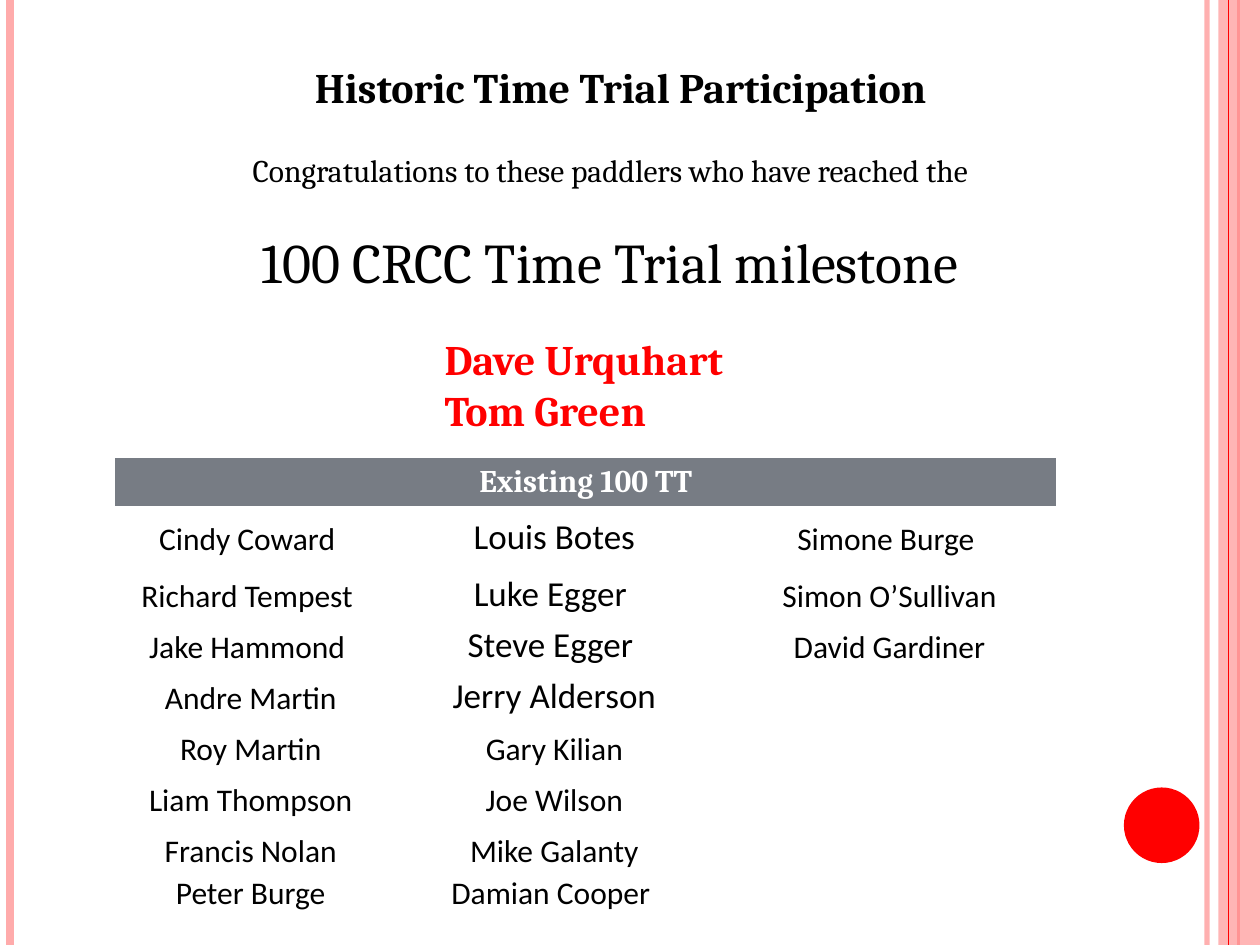
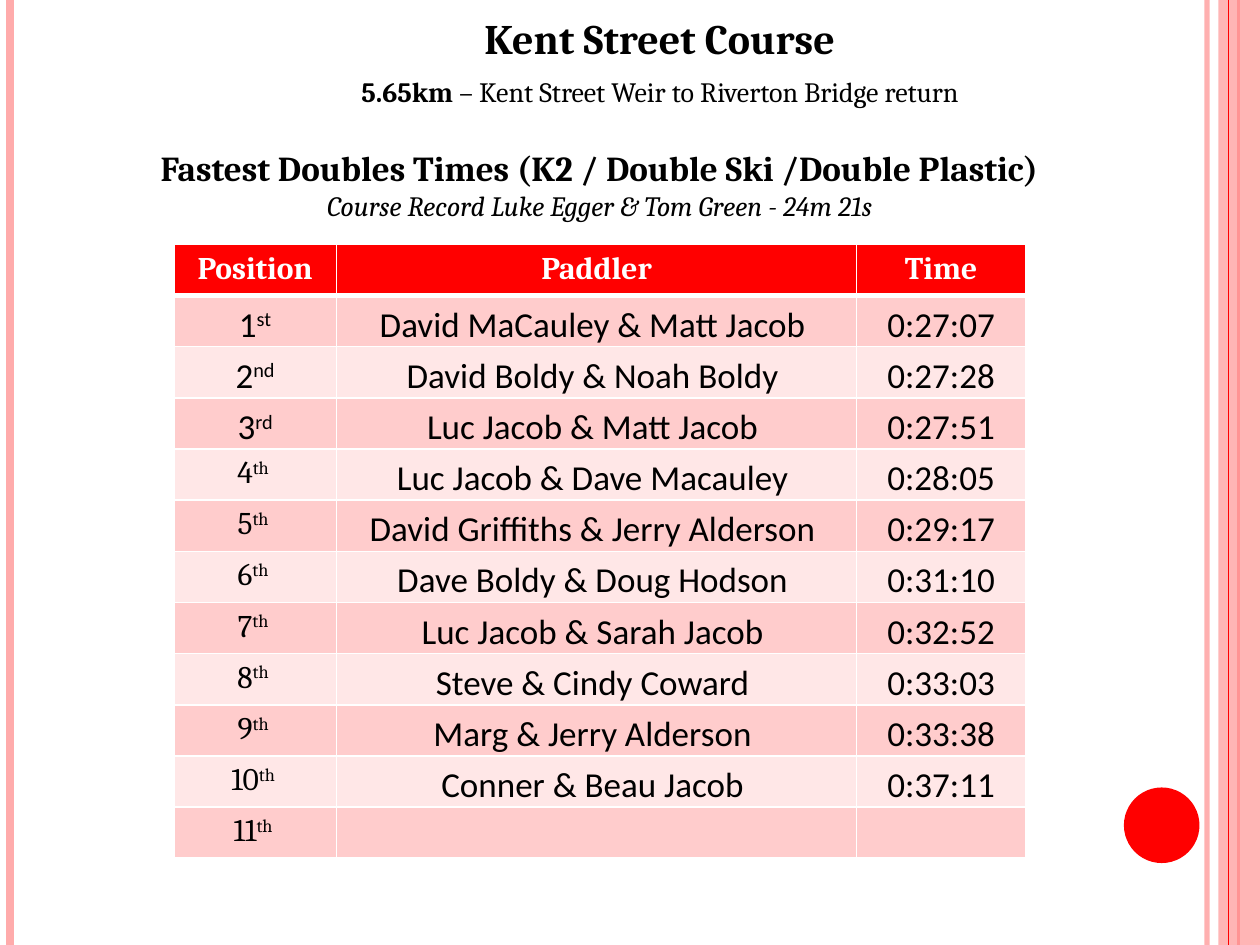
from lxml import etree
from pptx import Presentation
from pptx.dml.color import RGBColor
from pptx.enum.shapes import MSO_CONNECTOR, MSO_SHAPE
from pptx.enum.text import MSO_ANCHOR, PP_ALIGN
from pptx.oxml.ns import qn
from pptx.util import Inches, Pt

LINE = MSO_CONNECTOR.STRAIGHT
RECT, OVAL = MSO_SHAPE.RECTANGLE, MSO_SHAPE.OVAL
TOP, BOTTOM = MSO_ANCHOR.TOP, MSO_ANCHOR.BOTTOM
LEFT, CENTER = PP_ALIGN.LEFT, PP_ALIGN.CENTER
RED = RGBColor(0xFF, 0x00, 0x00)
PINK = RGBColor(0xFF, 0xAB, 0xAB)
ROSE = RGBColor(0xFF, 0xCC, 0xCC)
BLUSH = RGBColor(0xFF, 0xE7, 0xE7)
SLATE = RGBColor(0x77, 0x7C, 0x84)
BLACK = RGBColor(0x00, 0x00, 0x00)
WHITE = RGBColor(0xFF, 0xFF, 0xFF)
SERIF, SANS = "Cambria", "Calibri"

deck = Presentation()
deck.slide_width, deck.slide_height = Inches(10), Inches(7.5)
W, H = deck.slide_width, deck.slide_height
COL, ROW = W // 100, H // 75


def write(para, text, size, face=SERIF, color=BLACK, bold=False, align=CENTER):
    para.alignment = align
    font = para.font
    font.size, font.name, font.bold = Pt(size), face, bold
    font.color.rgb = color
    for part in [text] if isinstance(text, str) else text:
        para.add_run().text = part


def grid(slide, left, top, cols, rows, head, bands):
    frame = slide.shapes.add_table(
        len(rows), len(cols), int(left * COL), int(top * ROW),
        int(sum(cols) * COL), int(sum(rows) * ROW))
    table = frame.table
    table.horz_banding = False
    for col, wide in zip(table.columns, cols):
        col.width = int(wide * COL)
    for r, (row, high) in enumerate(zip(table.rows, rows)):
        row.height = int(high * ROW)
        for cell in row.cells:
            color = bands[(r - 1) % len(bands)] if r else head
            if color:
                cell.fill.solid()
                cell.fill.fore_color.rgb = color
            else:
                cell.fill.background()
            if r:
                cell.margin_left = cell.margin_right = cell.margin_top = cell.margin_bottom = 0
                cell.vertical_anchor = BOTTOM
            props = cell._tc.get_or_add_tcPr()
            for i, side in enumerate("LRTB"):
                thick = 3 if (r == 0 and side == "B") or (r == 1 and side == "T") else 1
                edge = etree.Element(qn("a:ln" + side), w=str(int(Pt(thick))))
                fill = etree.SubElement(edge, qn("a:solidFill"))
                etree.SubElement(fill, qn("a:srgbClr"), val=str(WHITE))
                props.insert(i, edge)
    return table


RAILS = [(95.8, PINK, 3, 93), (0.8, PINK, 4.5, 100), (98.3, RED, 1.5, 100),
         (None, PINK, 0, 87), (97.5, RED, 0.75, 100)]

slides = []
for _ in range(2):
    slide = deck.slides.add_slide(deck.slide_layouts[6])
    slides.append(slide)
    for x, color, thick, clear in RAILS:
        if x is None:
            band = slide.shapes.add_shape(RECT, int(96.7 * COL), 0, int(3.3 * COL), H)
            band.shadow.inherit = False
            band.fill.solid()
            band.fill.fore_color.rgb = color
            band.line.fill.background()
        else:
            band = slide.shapes.add_connector(LINE, int(x * COL), 0, int(x * COL), H)
            band.line.color.rgb = color
            band.line.width = Pt(thick)
            etree.SubElement(band._element.spPr, qn("a:effectLst"))
        if clear < 100:
            tint = next(band._element.spPr.iter(qn("a:srgbClr")))
            etree.SubElement(tint, qn("a:alpha"), val=str(clear * 1000))
    dot = slide.shapes.add_shape(
        OVAL, int(89.2 * COL), int(62.5 * ROW), 6 * COL, 6 * ROW)
    dot.shadow.inherit = False
    dot.fill.solid()
    dot.fill.fore_color.rgb = RED
    dot.line.fill.background()

BOXES = [
    (0, 9.1, 4.4, 80.3, 5, [("Historic Time Trial Participation", 24, BLACK, True, CENTER)]),
    (0, 8.3, 11.5, 80.3, 12.5, [
        ("Congratulations to these paddlers who have reached the", 18, BLACK, False, CENTER),
        ("100 CRCC Time Trial milestone", 32, BLACK, False, CENTER)]),
    (0, 34.3, 26, 67.7, 9.1, [
        ("Dave Urquhart", 24, RED, True, LEFT), ("Tom Green", 24, RED, True, LEFT)]),
    (1, 10.6, 0.5, 83.5, 5, [("Kent Street Course", 24, BLACK, True, CENTER)]),
    (1, 9.1, 5.4, 86.6, 3.7, [
        (["5.65km ", "– Kent Street Weir to Riverton Bridge return"], 16, BLACK, False, CENTER)]),
    (1, 4.3, 11.1, 86.6, 7.1, [
        ("Fastest Doubles Times (K2 / Double Ski /Double Plastic)", 20, BLACK, True, CENTER),
        ("Course Record Luke Egger & Tom Green - 24m 21s", 16, BLACK, False, CENTER)]),
]
for page, x, y, wide, high, lines in BOXES:
    box = slides[page].shapes.add_textbox(
        int(x * COL), int(y * ROW), int(wide * COL), int(high * ROW))
    frame = box.text_frame
    frame.word_wrap = True
    for i, (text, size, color, bold, align) in enumerate(lines):
        para = frame.paragraphs[0] if i == 0 else frame.add_paragraph()
        write(para, text, size, SERIF, color, bold, align)
        if size == 32:
            para.space_before = Pt(22)
        if isinstance(text, list):
            para.runs[0].font.bold = True
        if text[:6] == "Course":
            para.font.italic = True

NAMES = [
    ["Cindy Coward ", "Richard Tempest ", "Jake Hammond ", "Andre Martin",
     "Roy Martin", "Liam Thompson", "Francis Nolan", "Peter Burge"],
    ["Louis Botes", "Luke Egger ", "Steve Egger ", "Jerry Alderson",
     "Gary Kilian", "Joe Wilson", "Mike Galanty", "Damian Cooper "],
    ["Simone Burge ", "Simon O’Sullivan", "David Gardiner"],
]
roll = grid(slides[0], 9.1, 36.3, [21.6, 26.6, 26.6],
            [4.05, 4.05, 4.5] + [4.05] * 5 + [3.3], SLATE, [None])
roll.cell(0, 0).merge(roll.cell(0, 2))
write(roll.cell(0, 0).text_frame.paragraphs[0], "Existing 100 TT", 18, SERIF, WHITE, True)
for c, names in enumerate(NAMES):
    for r, name in enumerate(names):
        size = 20 if c == 1 and r < 4 else 18
        write(roll.cell(r + 1, c).text_frame.paragraphs[0], name, size, SANS)

TIMES = [
    ("David MaCauley & Matt Jacob ", "0:27:07"),
    ("David Boldy & Noah Boldy ", "0:27:28"),
    ("Luc Jacob & Matt Jacob ", "0:27:51"),
    ("Luc Jacob & Dave Macauley ", "0:28:05"),
    ("David Griffiths & Jerry Alderson ", "0:29:17"),
    ("Dave Boldy & Doug Hodson ", "0:31:10"),
    ("Luc Jacob & Sarah Jacob ", "0:32:52"),
    ("Steve & Cindy Coward ", "0:33:03"),
    ("Marg & Jerry Alderson ", "0:33:38"),
    ("Conner & Beau Jacob ", "0:37:11"),
    ("", ""),
]
board = grid(slides[1], 13.8, 19.4, [12.9, 41.3, 13.4], [4.06] * 12, RED, [ROSE, BLUSH])
for c, title in enumerate(["Position", "Paddler", "Time"]):
    write(board.cell(0, c).text_frame.paragraphs[0], title, 18, SERIF, WHITE, True)
for r, pair in enumerate(TIMES, 1):
    place = board.cell(r, 0)
    para = place.text_frame.paragraphs[0]
    if r < 4:
        write(para, [str(r), ["st", "nd", "rd"][r - 1]], 20, SANS)
    else:
        write(para, [str(r), "th "], 18)
        place.vertical_anchor = TOP
        place.margin_left = place.margin_right = COL
        place.margin_top = place.margin_bottom = ROW // 2
    para.runs[1].font._element.set("baseline", "30000")
    for c, text in enumerate(pair, 1):
        if text:
            write(board.cell(r, c).text_frame.paragraphs[0], text, 20, SANS)

deck.save("out.pptx")
